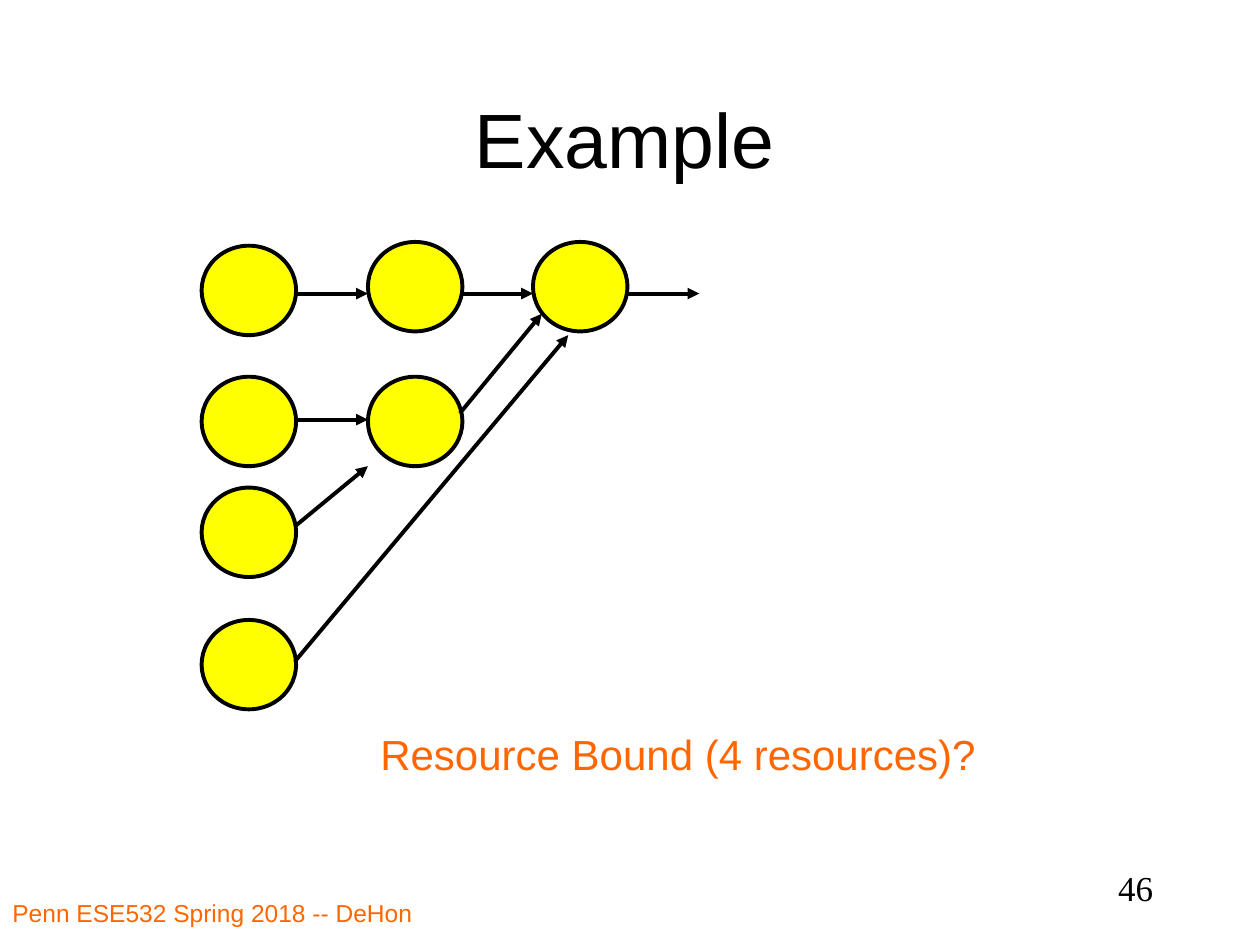
from pptx import Presentation
from pptx.dml.color import RGBColor
from pptx.enum.shapes import MSO_CONNECTOR, MSO_SHAPE
from pptx.enum.text import MSO_ANCHOR, PP_ALIGN
from pptx.oxml.ns import qn
from pptx.util import Inches, Pt
from lxml import etree

BLACK = RGBColor(0x00, 0x00, 0x00)
YELLOW = RGBColor(0xFF, 0xFF, 0x00)
ORANGE = RGBColor(0xFF, 0x66, 0x00)
STRAIGHT = MSO_CONNECTOR.STRAIGHT
OVAL = MSO_SHAPE.OVAL
LEFT, CENTER, RIGHT = PP_ALIGN.LEFT, PP_ALIGN.CENTER, PP_ALIGN.RIGHT
TOP, MIDDLE = MSO_ANCHOR.TOP, MSO_ANCHOR.MIDDLE
LINE_WIDTH = Pt(2.25)
NODE_WIDTH, NODE_HEIGHT = Inches(0.75), Inches(0.71)


def write_text(box, text, *, size, color=BLACK, font="Arial",
               align=LEFT, anchor=TOP, wrap=True):
    frame = box.text_frame
    frame.word_wrap = wrap
    frame.vertical_anchor = anchor
    para = frame.paragraphs[0]
    para.alignment = align
    span = para.add_run()
    span.text = text
    span.font.name = font
    span.font.size = Pt(size)
    span.font.color.rgb = color


deck = Presentation()
deck.slide_width, deck.slide_height = Inches(10), Inches(7.5)
page = deck.slides.add_slide(deck.slide_layouts.get_by_name("Title Only"))

# Title
title = page.shapes.title
title.left, title.top = Inches(0.71), Inches(0.47)
title.width, title.height = Inches(8.5), Inches(1.25)
write_text(title, "Example", size=44, align=CENTER, anchor=MIDDLE)

# Operations, one column per time step
columns = [
    (1.6, [1.95, 2.99, 3.87, 4.92]),
    (2.92, [1.92, 2.99]),
    (4.23, [1.92]),
]
for left, tops in columns:
    for top in tops:
        node = page.shapes.add_shape(
            OVAL, Inches(left), Inches(top), NODE_WIDTH, NODE_HEIGHT)
        node.shadow.inherit = False
        node.fill.solid()
        node.fill.fore_color.rgb = YELLOW
        node.line.color.rgb = BLACK
        node.line.width = LINE_WIDTH

# Dependencies between operations
dependencies = [
    (2.35, 2.33, 2.92, 2.33),
    (3.66, 2.33, 4.23, 2.33),
    (4.98, 2.33, 5.55, 2.33),
    (2.35, 3.33, 2.92, 3.33),
    (2.35, 4.17, 2.92, 3.7),
    (2.34, 5.25, 4.51, 2.66),
    (3.65, 3.28, 4.3, 2.49),
]
for ends in dependencies:
    arrow = page.shapes.add_connector(STRAIGHT, *map(Inches, ends))
    arrow.line.color.rgb = BLACK
    arrow.line.width = LINE_WIDTH
    etree.SubElement(arrow.line._get_or_add_ln(), qn("a:tailEnd"), type="triangle")
    etree.SubElement(arrow._element.spPr, qn("a:effectLst"))

# Question, footer and page number
question = page.shapes.add_textbox(
    Inches(2.92), Inches(5.33), Inches(4.97), Inches(1.31))
write_text(question, "Resource Bound (4 resources)?", size=24, color=ORANGE,
           anchor=MIDDLE, wrap=False)

footer = page.shapes.add_textbox(
    Inches(0), Inches(7.08), Inches(4.58), Inches(0.42))
write_text(footer, "Penn ESE532 Spring 2018 -- DeHon", size=14, color=ORANGE)

page_number = page.shapes.add_textbox(
    Inches(7.17), Inches(6.83), Inches(2.08), Inches(0.5))
write_text(page_number, "46", size=20, font="Times New Roman", align=RIGHT)

deck.save("out.pptx")
